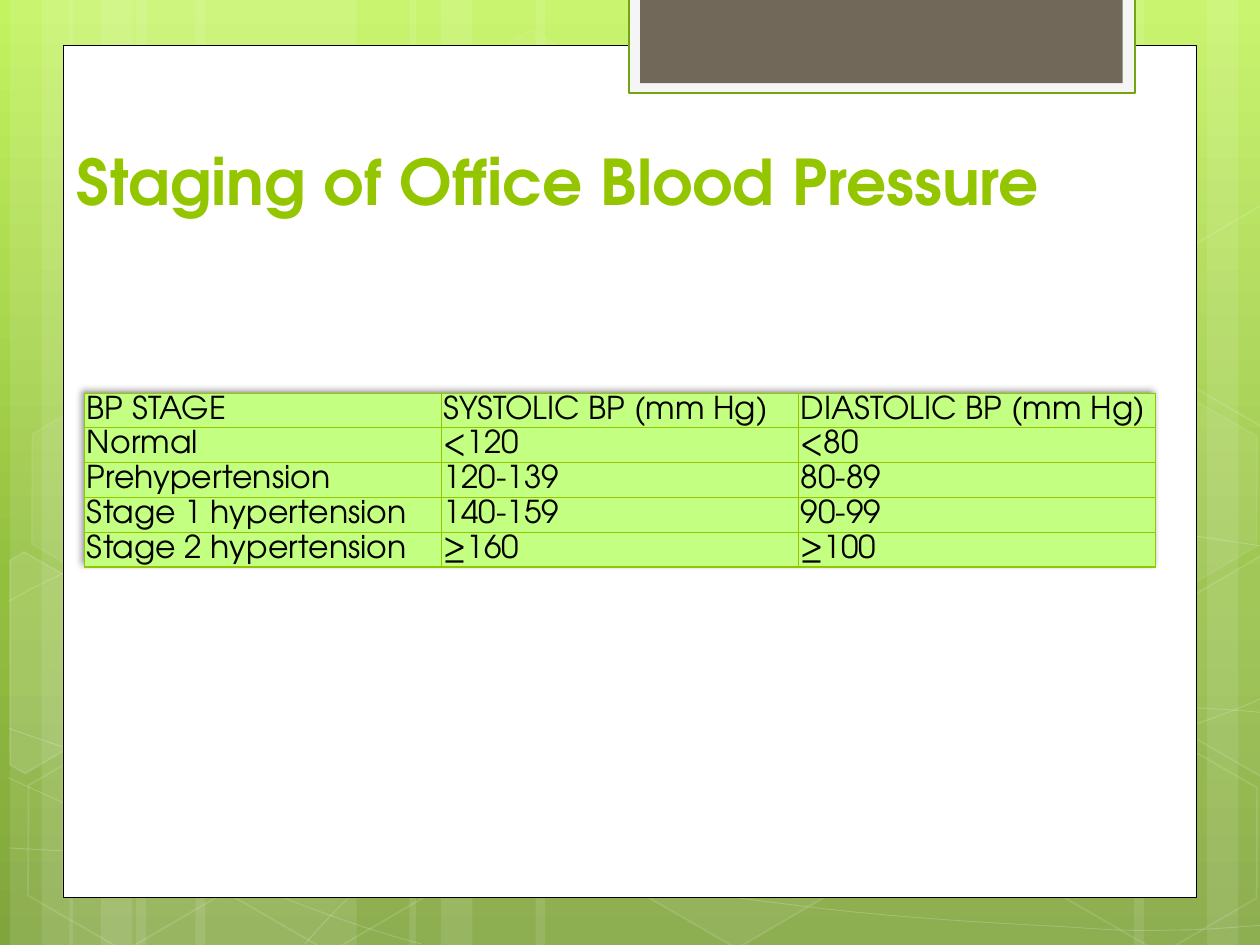
from copy import deepcopy
from dataclasses import dataclass

from lxml import etree
from pptx import Presentation
from pptx.dml.color import RGBColor
from pptx.enum import shapes, text
from pptx.oxml import ns
from pptx.util import Inches, Pt


@dataclass(frozen=True)
class Theme:
    font: str = "TeX Gyre Adventor"
    title_size: int = 36
    cell_size: int = 18
    white: str = "FFFFFF"
    black: str = "000000"
    green: str = "94C600"
    cell: str = "C3FF80"
    tab_face: str = "F5F5F5"
    tab_line: str = "74A510"
    tab_core: str = "71685A"
    sky: tuple = ((0, "C3F35F"), (0.62, "93BF3F"), (1, "81A53E"))


THEME = Theme()

STRIPES = [(1.08, 1.75), (0.08, 0.5), (0.33, 0.83), (1.55, 1.75), (0.55, 0.5), (0.8, 0.83),
           (7.33, 1.75), (9.58, 0.5), (9, 0.83), (4.25, 3.08), (3.25, 0.5), (3.5, 0.83)]

CURVES = [
    [(0.07, 6.73), (0.61, 6.76), (1.15, 6.79), (1.9, 6.78), (2.65, 6.77), (3.58, 6.75), (4.58, 6.65),
     (5.58, 6.55), (7, 6.36), (7.92, 6.17), (8.83, 5.98), (9.77, 5.68), (10.07, 5.51)],
    [(0.07, 4.77), (0.36, 4.61), (0.65, 4.46), (1.21, 4.31), (1.78, 4.16), (2.59, 3.94), (3.47, 3.87),
     (4.36, 3.8), (5.44, 3.79), (6.54, 3.87), (7.64, 3.95), (9.47, 4.26), (10.07, 4.34)],
    [(0.06, 6.17), (1.27, 6.72), (2.47, 7.27), (3.34, 7.49)],
    [(0.07, 5.78), (0.38, 5.89), (0.7, 6), (1.28, 6.16), (1.86, 6.31), (2.73, 6.56), (3.57, 6.73),
     (4.4, 6.9), (5.45, 7.08), (6.28, 7.18), (7.11, 7.29), (8, 7.33), (8.53, 7.36),
     (9.05, 7.4), (9.19, 7.38), (9.45, 7.38), (9.71, 7.37), (9.89, 7.35), (10.07, 7.34)],
    [(2.42, 7.49), (2.6, 7.29), (2.78, 7.09), (3.02, 6.91), (3.26, 6.73), (3.6, 6.53), (3.88, 6.39),
     (4.16, 6.25), (4.33, 6.19), (4.7, 6.09), (5.06, 5.99), (5.73, 5.85), (6.08, 5.78),
     (6.44, 5.71), (6.49, 5.71), (6.8, 5.69), (7.11, 5.66), (7.6, 5.63), (7.94, 5.62),
     (8.29, 5.61), (8.86, 5.62), (8.86, 5.62), (9.08, 5.62), (9.31, 5.62), (9.53, 5.62),
     (9.71, 5.63), (9.88, 5.64), (10.06, 5.66)],
]

HEXAGONS = [(3.34, 0.36, 4, 8), (4.97, 5.89, 6, 12), (0.11, 5.91, None, 12), (0.14, 3.12, 7, 8),
            (1.74, 5.92, None, 12), (8.34, 5.93, None, 12), (8.34, 3.14, 7, 8)]

CUT_HEXAGONS = [
    ([(0.08, 4.45), (0.19, 4.38), (0.96, 4.82), (0.95, 5.7), (0.2, 6.14), (0.08, 6.07)], 10),
    ([(9.26, 4.85), (10.01, 4.41), (10.09, 4.46), (10.09, 6.13), (10.02, 6.17), (9.26, 5.73)], 4),
    ([(9.26, 2.07), (10.01, 1.63), (10.1, 1.68), (10.09, 3.35), (10.02, 3.39), (9.26, 2.95)], None),
]

STAGES = [
    ("BP STAGE", "SYSTOLIC BP (mm Hg)", "DIASTOLIC BP (mm Hg)"),
    ("Normal", "<120", "<80"),
    ("Prehypertension", "120-139", "80-89"),
    ("Stage 1 hypertension", "140-159", "90-99"),
    ("Stage 2 hypertension", "≥160", "≥100"),
]


def paint(fill, color, alpha=100):
    fill.solid()
    fill.fore_color.rgb = RGBColor.from_string(color)
    if alpha < 100:
        for clr in fill._xPr.iter(ns.qn("a:srgbClr")):
            etree.SubElement(clr, ns.qn("a:alpha"), val=str(alpha * 1000))


def style(sp, fill=None, fill_alpha=100, line=None, width=1, line_alpha=100):
    sp.shadow.inherit = False
    if fill:
        paint(sp.fill, fill, fill_alpha)
    else:
        sp.fill.background()
    if line:
        sp.line.width = Pt(width)
        paint(sp.line.fill, line, line_alpha)
    else:
        sp.line.fill.background()


def add_preset(s, kind, box, **look):
    sp = s.shapes.add_shape(kind, *map(Inches, box))
    style(sp, **look)
    return sp


def add_outline(s, points, close, **look):
    start, *others = [(Inches(x), Inches(y)) for x, y in points]
    builder = s.shapes.build_freeform(*start)
    builder.add_line_segments(others, close=close)
    sp = builder.convert_to_shape()
    style(sp, **look)
    return sp


def add_curve(s, points, **look):
    sp = add_outline(s, points, False, **look)
    lines = list(sp.element.iter(ns.qn("a:lnTo")))
    outline = lines[0].getparent()
    for i in range(0, len(lines), 3):
        curve = etree.SubElement(outline, ns.qn("a:cubicBezTo"))
        for line in lines[i:i + 3]:
            curve.append(line[0])
            outline.remove(line)


def add_background(s):
    fill = s.background.fill
    fill.gradient()
    fill.gradient_angle = 270
    stops = s.element.find(".//" + ns.qn("a:gsLst"))
    stops.append(deepcopy(stops[-1]))
    for stop, (position, color) in zip(fill.gradient_stops, THEME.sky):
        stop.position = position
        stop.color.rgb = RGBColor.from_string(color)


def add_decoration(s, height):
    white = THEME.white
    for left, width in STRIPES:
        add_preset(s, shapes.MSO_SHAPE.RECTANGLE, (left, 0, width, height), fill=white, fill_alpha=10)
    for points in CURVES:
        add_curve(s, points, line=white, width=0.5, line_alpha=20)
    for left, top, alpha, line_alpha in HEXAGONS:
        sp = add_preset(s, shapes.MSO_SHAPE.HEXAGON, (left, top, 1.75, 1.52), fill=alpha and white,
                        fill_alpha=alpha or 100, line=white, line_alpha=line_alpha)
        sp.adjustments[0] = 0.285
        sp.rotation = 30
    for points, alpha in CUT_HEXAGONS:
        add_outline(s, points, True, fill=alpha and white, fill_alpha=alpha or 100,
                    line=white, line_alpha=12)


def add_panel(s, box):
    left, top, width, height = box
    rect = shapes.MSO_SHAPE.RECTANGLE
    add_preset(s, rect, box, fill=THEME.white, line=THEME.black, width=0.5)
    add_preset(s, rect, (left + 4.49, -0.02, 4.02, 0.76), fill=THEME.tab_face,
               line=THEME.tab_line, width=1.25)
    add_preset(s, rect, (left + 4.58, -0.02, 3.83, 0.68), fill=THEME.tab_core)


def format_run(r, size, color, bold=False):
    r.font.name = THEME.font
    r.font.size = Pt(size)
    r.font.bold = bold
    r.font.color.rgb = RGBColor.from_string(color)


def place_title(s, box, words):
    title = s.shapes.title
    title.left, title.top, title.width, title.height = map(Inches, box)
    tf = title.text_frame
    tf.text = words
    tf.vertical_anchor = text.MSO_ANCHOR.BOTTOM
    tf.auto_size = text.MSO_AUTO_SIZE.NONE
    p = tf.paragraphs[0]
    p.alignment = text.PP_ALIGN.LEFT
    format_run(p.runs[0], THEME.title_size, THEME.green, True)
    title.element.getparent().append(title.element)


def add_borders(cell):
    props = cell._tc.get_or_add_tcPr()
    for i, side in enumerate(("lnL", "lnR", "lnT", "lnB")):
        ln = etree.Element(ns.qn("a:" + side), w=str(Pt(0.75)))
        solid = etree.SubElement(ln, ns.qn("a:solidFill"))
        etree.SubElement(solid, ns.qn("a:srgbClr"), val=THEME.green)
        props.insert(i, ln)


def add_table_shadow(table):
    effects = etree.Element(ns.qn("a:effectLst"))
    shadow = etree.SubElement(effects, ns.qn("a:outerShdw"), blurRad=str(Pt(3)),
                              dist=str(Pt(3)), dir="13500000")
    clr = etree.SubElement(shadow, ns.qn("a:srgbClr"), val=THEME.black)
    etree.SubElement(clr, ns.qn("a:alpha"), val="40000")
    table._tbl.tblPr.insert(0, effects)


def add_stage_table(s, box, rows):
    table = s.shapes.add_table(len(rows), len(rows[0]), *map(Inches, box)).table
    table.first_row = table.horz_banding = False
    add_table_shadow(table)
    for i, row in enumerate(rows):
        for j, words in enumerate(row):
            cell = table.cell(i, j)
            cell.text = words
            cell.vertical_anchor = text.MSO_ANCHOR.MIDDLE
            cell.margin_left = cell.margin_right = Inches(0.02)
            cell.margin_top = cell.margin_bottom = Inches(0.02)
            paint(cell.fill, THEME.cell)
            add_borders(cell)
            format_run(cell.text_frame.paragraphs[0].runs[0], THEME.cell_size, THEME.black)


def main():
    prs = Presentation()
    prs.slide_width, prs.slide_height = Inches(10), Inches(7.5)
    s = prs.slides.add_slide(prs.slide_layouts[5])
    add_background(s)
    add_decoration(s, 7.5)
    add_panel(s, (0.5, 0.36, 9, 6.76))
    place_title(s, (0.51, 1.12, 8.98, 0.66), "Staging of Office Blood Pressure")
    add_stage_table(s, (0.67, 3.12, 8.5, 1.38), STAGES)
    prs.save("out.pptx")


if __name__ == "__main__":
    main()
